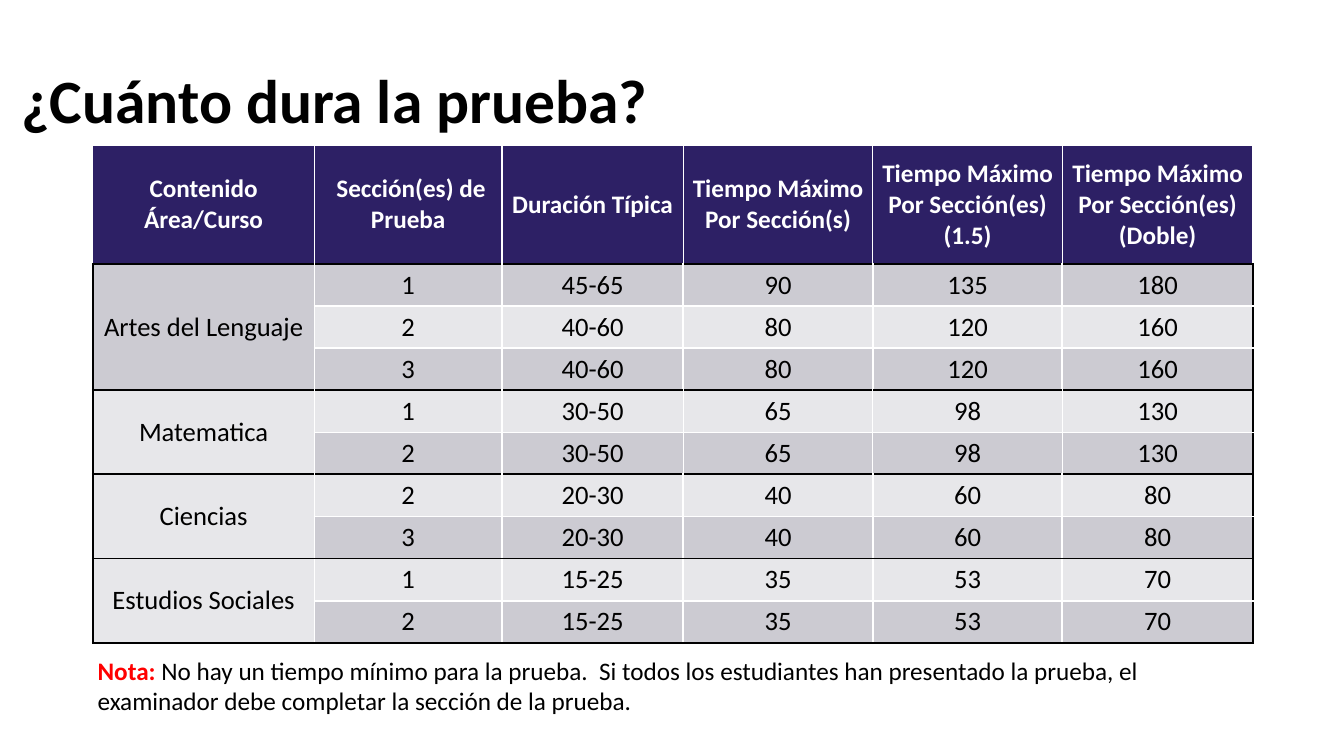
import pptx
import pptx.util
import pptx.dml.color
import pptx.enum.text
import lxml.etree

deck = pptx.Presentation()
deck.slide_width = pptx.util.Inches(13.33)
deck.slide_height = pptx.util.Inches(7.5)
col = deck.slide_width / 100
row = deck.slide_height / 100
mid = pptx.enum.text.MSO_ANCHOR.MIDDLE
center = pptx.enum.text.PP_ALIGN.CENTER
ns = "http://schemas.openxmlformats.org/drawingml/2006/main"
black, white = "000000", "FFFFFF"


def paint(run, size, tint, bold):
    run.font.name = "Calibri"
    run.font.size = pptx.util.Pt(size)
    run.font.bold = bold
    run.font.color.rgb = pptx.dml.color.RGBColor.from_string(tint)


def edge(cell, side, tint, width):
    line = lxml.etree.SubElement(cell._tc.get_or_add_tcPr(), f"{{{ns}}}ln{side}")
    line.set("w", str(pptx.util.Pt(width)))
    fill = lxml.etree.SubElement(line, f"{{{ns}}}solidFill")
    lxml.etree.SubElement(fill, f"{{{ns}}}srgbClr").set("val", tint)


slide = deck.slides.add_slide(deck.slide_layouts[5])
title = slide.shapes.title
title.left, title.top = int(0.83 * col), int(3.07 * row)
title.width, title.height = int(86.27 * col), int(19.33 * row)
frame = title.text_frame
frame.text = "¿Cuánto dura la prueba?"
frame.auto_size = pptx.enum.text.MSO_AUTO_SIZE.NONE
frame.vertical_anchor = mid
head = frame.paragraphs[0]
head.alignment = pptx.enum.text.PP_ALIGN.LEFT
head.line_spacing = 1.07
head.space_after = pptx.util.Pt(8)
paint(head.runs[0], 44, black, True)

heads = ["Contenido Área/Curso", " Sección(es) de Prueba", "Duración Típica",
         "Tiempo Máximo Por Sección(s)", "Tiempo Máximo Por Sección(es)\n(1.5)",
         "Tiempo Máximo Por Sección(es)\n(Doble)"]
groups = [
    ("Artes del Lenguaje", 1.5, [("1", "45-65", "90", "135", "180"),
                                 ("2", "40-60", "80", "120", "160"),
                                 ("3", "40-60", "80", "120", "160")]),
    ("Matematica", 1, [("1", "30-50", "65", "98", "130"),
                       ("2", "30-50", "65", "98", "130")]),
    ("Ciencias", 1.5, [("2", "20-30", "40", "60", "80"),
                       ("3", "20-30", "40", "60", "80")]),
    ("Estudios Sociales", 1.5, [("1", "15-25", "35", "53", "70"),
                                ("2", "15-25", "35", "53", "70")]),
]
wides = [16.5, 13.95, 13.5, 14.1, 14.1, 14.18]
talls = [15.73] + [5.51] * sum(len(tests) for name, width, tests in groups)

grid = slide.shapes.add_table(
    len(talls), len(wides), int(6.9 * col), int(19.2 * row),
    int(sum(wides) * col), int(sum(talls) * row)).table
for part, wide in zip(grid.columns, wides):
    part.width = int(wide * col)
for part, tall in zip(grid.rows, talls):
    part.height = int(tall * row)

lines = [(heads, 1, False, True)]
for name, width, tests in groups:
    start = len(lines)
    for n, test in enumerate(tests):
        lines.append(((name if n == 0 else "",) + test, width, n == 0, n == len(tests) - 1))
    grid.cell(start, 0).merge(grid.cell(len(lines) - 1, 0))

for y, (texts, width, first, last) in enumerate(lines):
    for x, text in enumerate(texts):
        cell = grid.cell(y, x)
        if cell.is_spanned:
            continue
        dark = {"L": y > 0 and x == 0, "R": y > 0 and x == len(wides) - 1,
                "T": first, "B": last or cell.is_merge_origin}
        for side, on in dark.items():
            edge(cell, side, black if on else white, 1.5 if on else width)
        shade = "2D2065" if y == 0 else "CCCBD2" if y % 2 else "E7E7EA"
        cell.fill.solid()
        cell.fill.fore_color.rgb = pptx.dml.color.RGBColor.from_string(shade)
        cell.vertical_anchor = mid
        cell.margin_left = cell.margin_right = int(0.58 * col)
        cell.margin_top = cell.margin_bottom = int(0.65 * row)
        cell.text_frame.text = text
        for para in cell.text_frame.paragraphs:
            para.alignment = center
            for run in para.runs:
                paint(run, 19 if y else 18, black if y else white, y == 0)

note = slide.shapes.add_textbox(
    int(6.53 * col), int(86 * row), int(86.95 * col), int(9.47 * row)).text_frame
note.word_wrap = True
for text, tint, bold in [
        ("Nota: ", "FF0000", True),
        ("No hay un tiempo mínimo para la prueba.  Si todos los estudiantes han presentado "
         "la prueba, el examinador debe completar la sección de la prueba.", black, False)]:
    run = note.paragraphs[0].add_run()
    run.text = text
    paint(run, 18, tint, bold)

deck.save("out.pptx")
